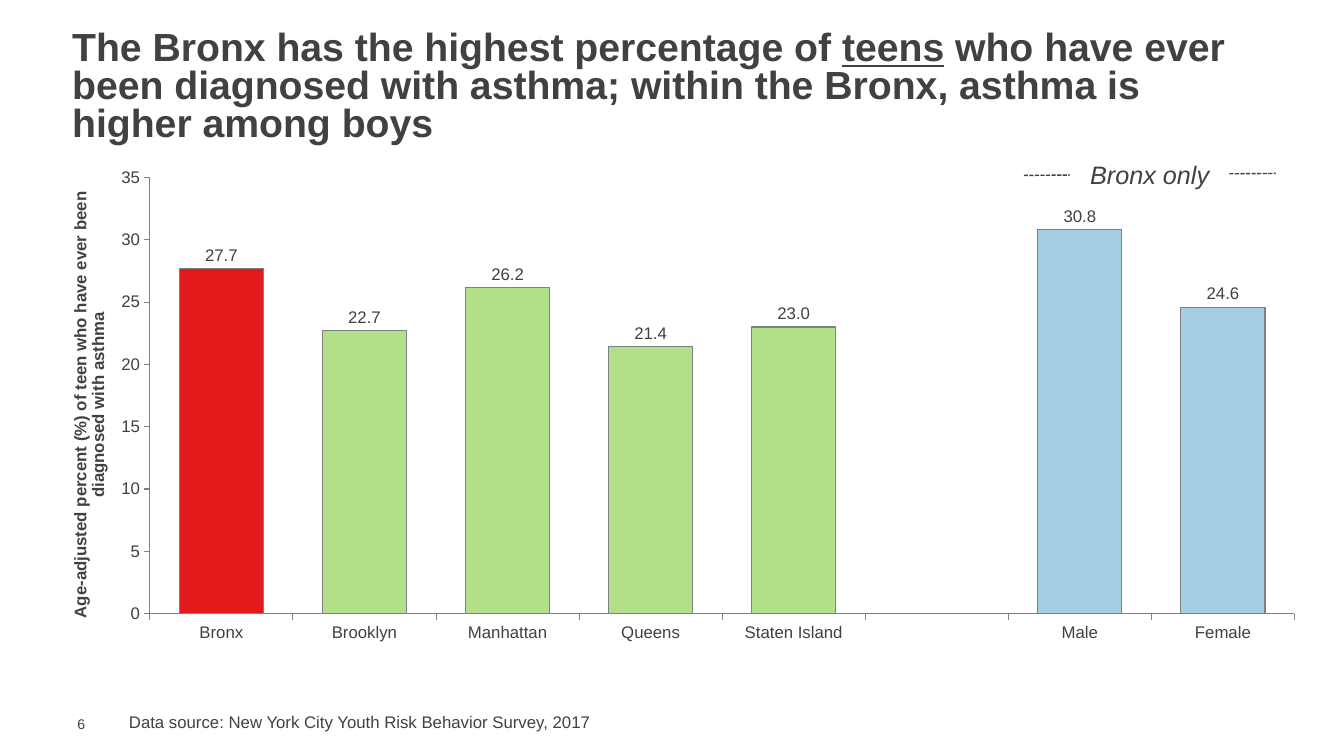
from collections import namedtuple

from lxml import etree
from pptx import Presentation
from pptx.chart.data import CategoryChartData
from pptx.dml.color import RGBColor
from pptx.enum.chart import XL_CHART_TYPE as ChartType
from pptx.enum.chart import XL_LABEL_POSITION as LabelPosition
from pptx.enum.chart import XL_TICK_MARK as TickMark
from pptx.enum.dml import MSO_LINE as Dash
from pptx.enum.shapes import MSO_CONNECTOR as Connector
from pptx.enum.shapes import MSO_SHAPE as Shape
from pptx.enum.text import MSO_ANCHOR as Anchor
from pptx.enum.text import PP_ALIGN as Align
from pptx.oxml import parse_xml
from pptx.oxml.ns import nsdecls, qn
from pptx.util import Cm, Pt

INK = RGBColor(0x41, 0x40, 0x42)
AXIS_GREY = RGBColor(0x80, 0x80, 0x80)
BRONX_RED = RGBColor(0xE3, 0x1A, 0x1C)
BOROUGH_GREEN = RGBColor(0xB2, 0xDF, 0x8A)
SEX_BLUE = RGBColor(0xA6, 0xCE, 0xE3)
WHITE = RGBColor(0xFF, 0xFF, 0xFF)
FONT = "Arial"

# All lengths in a box are centimetres
Box = namedtuple("Box", "left top width height")

# Category, percent, bar colour; the empty entry separates the two groups
ASTHMA_RATES = [
    ("Bronx", 27.7, BRONX_RED),
    ("Brooklyn", 22.7, BOROUGH_GREEN),
    ("Manhattan", 26.2, BOROUGH_GREEN),
    ("Queens", 21.4, BOROUGH_GREEN),
    ("Staten Island", 23.0, BOROUGH_GREEN),
    ("", None, BOROUGH_GREEN),
    ("Male", 30.8, SEX_BLUE),
    ("Female", 24.6, SEX_BLUE),
]


def style_font(font, size, bold=False, italic=False, underline=False):
    font.name, font.size = FONT, Pt(size)
    font.bold, font.italic = bold, italic
    font.underline = underline
    font.color.rgb = INK


def write_text(frame, text, size=12, bold=False, italic=False, underlined="",
               align=Align.LEFT, anchor=Anchor.TOP, line_spacing=None):
    """Fill a text frame, underlining one word if asked."""
    frame.word_wrap = True
    frame.vertical_anchor = anchor
    paragraph = frame.paragraphs[0]
    paragraph.alignment = align
    paragraph.line_spacing = line_spacing
    before, word, after = text.partition(underlined) if underlined else (text, "", "")
    for part in filter(None, (before, word, after)):
        run = paragraph.add_run()
        run.text = part
        style_font(run.font, size, bold, italic, bool(word) and part == word)


def add_text(slide, box, text, **text_format):
    frame = slide.shapes.add_textbox(*map(Cm, box)).text_frame
    write_text(frame, text, **text_format)
    return frame


def style_line(line, width=0.75, color=AXIS_GREY):
    line.color.rgb = color
    line.width = Pt(width)


def fix_plot_area(chart, x, y, w, h):
    """Place the inner plot area by fractions of the chart."""
    plot_area = chart._chartSpace.chart.plotArea
    for layout in plot_area.findall(qn("c:layout")):
        plot_area.remove(layout)
    layout = parse_xml(f"<c:layout {nsdecls('c')}><c:manualLayout/></c:layout>")
    settings = dict(layoutTarget="inner", xMode="edge", yMode="edge", x=x, y=y, w=w, h=h)
    for tag, value in settings.items():
        etree.SubElement(layout[0], qn(f"c:{tag}")).set("val", str(value))
    plot_area.insert(0, layout)


def add_rate_chart(slide, box):
    rates = CategoryChartData(number_format="#,##0.0")
    rates.categories = [name for name, _, _ in ASTHMA_RATES]
    rates.add_series("Series 1", [percent for _, percent, _ in ASTHMA_RATES])
    chart = slide.shapes.add_chart(
        ChartType.COLUMN_CLUSTERED, *map(Cm, box), rates).chart
    chart.has_legend = chart.has_title = False
    style_font(chart.font, 12)
    fix_plot_area(chart, 0.067, 0.027, 0.921, 0.777)

    # Axes
    percent_axis, group_axis = chart.value_axis, chart.category_axis
    for axis in (percent_axis, group_axis):
        axis.has_major_gridlines = False
        axis.major_tick_mark = TickMark.OUTSIDE
        axis.minor_tick_mark = TickMark.NONE
        style_line(axis.format.line)
    percent_axis.minimum_scale, percent_axis.maximum_scale = 0, 35
    percent_axis.major_unit = 5
    percent_axis.tick_labels.number_format = "General"
    percent_axis.tick_labels.number_format_is_linked = False
    write_text(percent_axis.axis_title.text_frame,
               "Age-adjusted percent (%) of teen who have ever been diagnosed with asthma",
               bold=True, align=Align.CENTER)

    # Bars
    plot = chart.plots[0]
    plot.gap_width = 70
    plot.vary_by_categories = False
    bars = plot.series[0]
    bars.invert_if_negative = False
    bars.format.fill.solid()
    bars.format.fill.fore_color.rgb = BOROUGH_GREEN
    style_line(bars.format.line)
    for index, (_, _, color) in enumerate(ASTHMA_RATES):
        if color != BOROUGH_GREEN:
            bar = bars.points[index].format
            bar.fill.solid()
            bar.fill.fore_color.rgb = color
            style_line(bar.line)

    # Value labels
    plot.has_data_labels = True
    labels = plot.data_labels
    labels.show_value = True
    labels.number_format = "#,##0.0"
    labels.number_format_is_linked = False
    labels.position = LabelPosition.OUTSIDE_END
    style_font(labels.font, 12)


def add_group_heading(slide, box):
    """Dashed rule with a label that covers its middle."""
    rule_y = box.top + 0.53
    rule = slide.shapes.add_connector(
        Connector.STRAIGHT, Cm(box.left), Cm(rule_y),
        Cm(box.left + box.width), Cm(rule_y - 0.05))
    style_line(rule.line, 1, INK)
    rule.line.dash_style = Dash.SQUARE_DOT
    etree.SubElement(rule._element.spPr, qn("a:effectLst"))

    label = slide.shapes.add_shape(
        Shape.RECTANGLE, Cm(box.left + 1.17), Cm(box.top), Cm(4.01), Cm(box.height))
    label.shadow.inherit = False
    label.fill.solid()
    label.fill.fore_color.rgb = WHITE
    label.line.fill.background()
    write_text(label.text_frame, "Bronx only", size=18, italic=True, align=Align.CENTER)


def add_footer(slide, box):
    number = add_text(slide, Box(box.left, box.top + 0.22, 1.09, 0.43), "6",
                      size=10, anchor=Anchor.MIDDLE)
    number.margin_top = number.margin_right = number.margin_bottom = 0
    add_text(slide, Box(box.left + 1.3, box.top, box.width - 1.3, box.height),
             "Data source: New York City Youth Risk Behavior Survey, 2017")


def main():
    deck = Presentation()
    deck.slide_width, deck.slide_height = Cm(33.87), Cm(19.05)
    slide = deck.slides.add_slide(deck.slide_layouts[6])
    add_text(slide, Box(1.57, 0.66, 30.68, 3.12),
             "The Bronx has the highest percentage of teens who have ever been "
             "diagnosed with asthma; within the Bronx, asthma is higher among boys",
             size=28, bold=True, underlined="teens", anchor=Anchor.MIDDLE,
             line_spacing=0.8)
    add_rate_chart(slide, Box(1.68, 4.09, 31.32, 14.15))
    add_group_heading(slide, Box(25.8, 3.89, 6.35, 1.02))
    add_footer(slide, Box(1.7, 17.81, 26.5, 0.76))
    deck.save("out.pptx")


if __name__ == "__main__":
    main()
